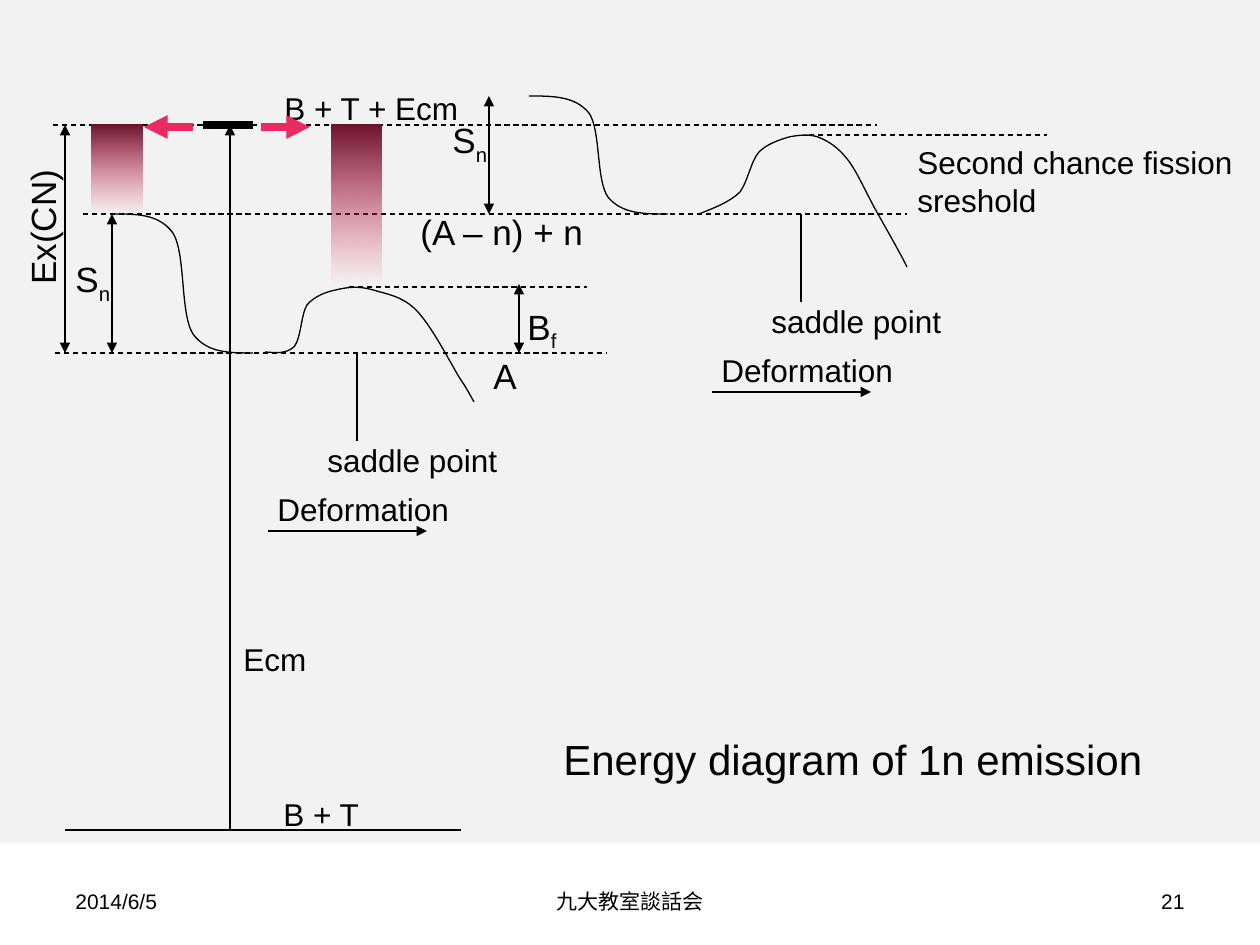
from dataclasses import dataclass

from lxml.etree import SubElement
from pptx import Presentation
from pptx.dml.color import RGBColor
from pptx.enum.dml import MSO_LINE
from pptx.enum.shapes import MSO_CONNECTOR, MSO_SHAPE
from pptx.enum.text import MSO_ANCHOR, MSO_AUTO_SIZE, PP_ALIGN
from pptx.oxml.ns import qn
from pptx.util import Pt

EMU_PER_PX = 914400 / 126


def px(length):
    return round(length * EMU_PER_PX)


@dataclass(frozen=True)
class Theme:
    font: str = "Arial"
    ink: RGBColor = RGBColor(0, 0, 0)
    panel: RGBColor = RGBColor(0xF2, 0xF2, 0xF2)
    accent: RGBColor = RGBColor(0xEA, 0x2A, 0x61)
    accent_dark: RGBColor = RGBColor(0x6C, 0x13, 0x2D)
    footer: int = 12
    label: int = 18
    symbol: int = 20
    title: int = 24
    thin: float = 0.75
    thick: float = 4.5


class Diagram:
    def __init__(self, slide, theme):
        self.shapes = slide.shapes
        self.theme = theme

    def text(self, words, box, size, subscript="", rotation=0):
        label = self.shapes.add_textbox(*map(px, box))
        label.rotation = rotation
        frame = label.text_frame
        frame.text = words
        frame.word_wrap = False
        frame.auto_size = MSO_AUTO_SIZE.SHAPE_TO_FIT_TEXT
        if subscript:
            lowered = frame.paragraphs[0].add_run()
            lowered.text = subscript
            lowered.font._element.set("baseline", "-25000")
        self.style_runs(frame, size)
        return frame

    def style_runs(self, frame, size):
        for paragraph in frame.paragraphs:
            for run in paragraph.runs:
                run.font.name = self.theme.font
                run.font.size = Pt(size)
                run.font.color.rgb = self.theme.ink

    def footer(self, words, left, width, alignment):
        frame = self.text(words, (left, 876, width, 50), self.theme.footer)
        frame.auto_size = MSO_AUTO_SIZE.NONE
        frame.word_wrap = True
        frame.vertical_anchor = MSO_ANCHOR.MIDDLE
        frame.paragraphs[0].alignment = alignment

    def panel(self, box):
        area = self.shapes.add_shape(MSO_SHAPE.RECTANGLE, *map(px, box))
        area.shadow.inherit = False
        area.line.fill.background()
        area.fill.solid()
        area.fill.fore_color.rgb = self.theme.panel
        return area

    def fading_bar(self, box):
        bar = self.panel(box)
        bar.fill.gradient()
        bar.fill.gradient_angle = 270
        top, bottom = bar.fill.gradient_stops
        top.color.rgb = self.theme.accent_dark
        bottom.color.rgb = self.theme.accent
        faded = list(bar._element.spPr.iter(qn("a:srgbClr")))[-1]
        SubElement(faded, qn("a:alpha"), val="0")

    def line(self, start, end, arrows=(), dashed=False, color=None, weight=None):
        stroke = self.shapes.add_connector(MSO_CONNECTOR.STRAIGHT, *map(px, start + end))
        stroke.line.color.rgb = color or self.theme.ink
        stroke.line.width = Pt(weight or self.theme.thin)
        if dashed:
            stroke.line.dash_style = MSO_LINE.DASH
        properties = stroke._element.spPr
        for arrow in arrows:
            SubElement(properties.find(qn("a:ln")), qn(f"a:{arrow}"), type="triangle")
        SubElement(properties, qn("a:effectLst"))

    def curve(self, points):
        builder = self.shapes.build_freeform(*points[0], scale=EMU_PER_PX)
        builder.add_line_segments(points[1:], close=False)
        outline = builder.convert_to_shape()
        outline.shadow.inherit = False
        outline.fill.background()
        outline.line.color.rgb = self.theme.ink
        outline.line.width = Pt(self.theme.thin)
        segments = list(outline._element.iter(qn("a:lnTo")))
        for first in range(0, len(segments), 3):
            group = segments[first:first + 3]
            bezier = SubElement(group[0].getparent(), qn("a:cubicBezTo"))
            for segment in group:
                bezier.append(segment[0])
                segment.getparent().remove(segment)

    def well_wall(self, left, top, width, height):
        across = (0, 0.17, 0.33, 0.43, 0.52, 0.48, 0.57, 0.67, 0.83, 1)
        down = (0, 0, 0, 0.14, 0.29, 0.71, 0.86, 1, 1, 1)
        self.curve([(round(left + width * x), round(top + height * y))
                    for x, y in zip(across, down)])


TAIL = ("tailEnd",)
HEAD = ("headEnd",)
BOTH = HEAD + TAIL

SECOND_BARRIER = [
    (699, 214), (714, 208), (730, 202), (740, 192), (748, 181), (751, 161),
    (759, 152), (767, 144), (779, 140), (789, 137), (799, 135), (809, 134),
    (818, 137), (828, 141), (838, 147), (848, 160), (858, 173), (868, 197),
    (878, 214), (888, 232), (898, 249), (907, 267),
]
FIRST_BARRIER = [
    (265, 352), (276, 353), (286, 354), (294, 347), (301, 339), (301, 315),
    (307, 305), (315, 296), (326, 292), (336, 290), (348, 287), (359, 286),
    (373, 290), (386, 294), (402, 296), (416, 310), (431, 325), (450, 362),
    (459, 377), (469, 392), (471, 397), (474, 402),
]


def main():
    deck = Presentation()
    deck.slide_width, deck.slide_height = px(1260), px(945)
    theme = Theme()
    diagram = Diagram(deck.slides.add_slide(deck.slide_layouts[6]), theme)

    diagram.footer("2014/6/5", 63, 294, PP_ALIGN.LEFT)
    diagram.footer("九大教室談話会", 430, 400, PP_ALIGN.CENTER)
    diagram.footer("21", 903, 294, PP_ALIGN.RIGHT)
    diagram.panel((0, 0, 1260, 843))

    diagram.line((65, 830), (461, 830))
    diagram.line((230, 830), (230, 125), TAIL)
    diagram.well_wall(113, 214, 140, 139)
    diagram.well_wall(529, 96, 139, 118)
    diagram.curve(SECOND_BARRIER)
    diagram.curve(FIRST_BARRIER)

    for left, right, level in [(83, 907, 214), (55, 607, 353), (53, 877, 125),
                               (349, 587, 287), (809, 1047, 135)]:
        diagram.line((left, level), (right, level), dashed=True)

    for box in [(92, 125, 51, 89), (332, 125, 50, 159)]:
        diagram.fading_bar(box)

    for x, top, bottom in [(112, 214, 353), (489, 96, 214), (519, 284, 353), (65, 125, 353)]:
        diagram.line((x, top), (x, bottom), BOTH)

    for x, y in [(357, 353), (801, 214)]:
        diagram.line((x, y), (x, y + 88))
        diagram.text("saddle point", (x - 42, y + 82, 195, 50), theme.label)
        diagram.line((x - 89, y + 178), (x + 70, y + 178), TAIL)
        diagram.text("Deformation", (x - 92, y + 131, 197, 50), theme.label)

    for words, subscript, box in [
        ("S", "n", (63, 251, 62, 54)),
        ("S", "n", (440, 112, 62, 54)),
        ("B", "f", (515, 299, 55, 54)),
        ("(A – n) + n", "", (408, 204, 189, 54)),
        ("A", "", (481, 348, 49, 54)),
    ]:
        diagram.text(words, box, theme.symbol, subscript)
    diagram.text("Ex(CN)", (-28, 200, 140, 54), theme.symbol, rotation=270)

    for words, box in [
        ("B + T", (271, 789, 102, 50)),
        ("B + T + Ecm", (272, 83, 200, 50)),
        ("Second chance fission\nsreshold", (905, 137, 340, 88)),
        ("Ecm", (231, 634, 88, 50)),
    ]:
        diagram.text(words, box, theme.label)
    diagram.text("Energy diagram of 1n emission", (551, 727, 605, 63), theme.title)

    diagram.line((203, 125), (253, 125), weight=theme.thick)
    for left, right, arrows in [(261, 310, TAIL), (144, 193, HEAD)]:
        diagram.line((left, 127), (right, 127), arrows, color=theme.accent, weight=theme.thick)

    deck.save("out.pptx")


if __name__ == "__main__":
    main()
